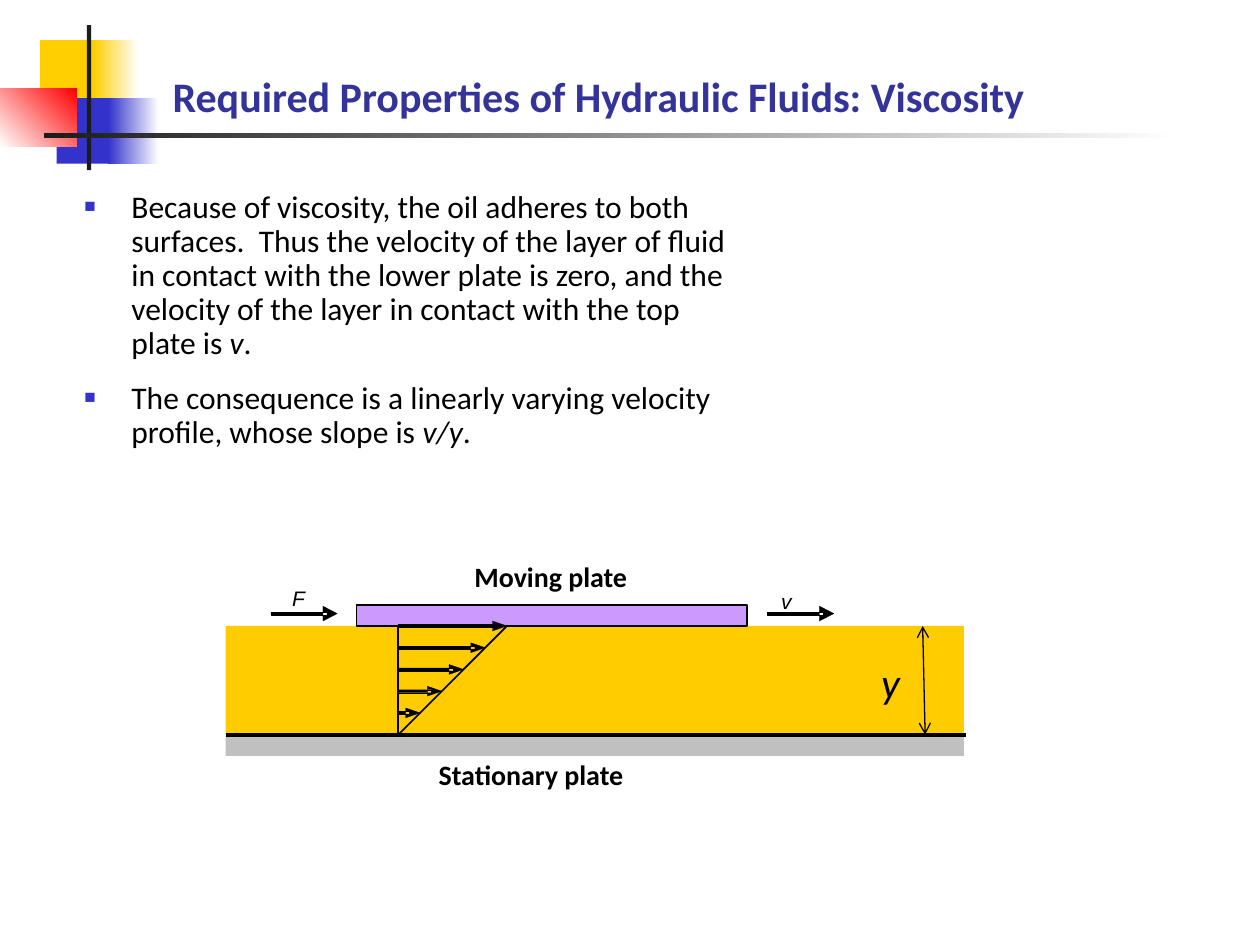
from lxml import etree
from pptx import Presentation
from pptx import util as u
from pptx.dml.color import RGBColor
from pptx.enum import shapes, text
from pptx.oxml.ns import qn

WHITE = RGBColor(0xFF, 0xFF, 0xFF)
BLACK = RGBColor(0, 0, 0)
YELLOW = RGBColor(0xFF, 0xCF, 0x01)
BLUE = RGBColor(0x33, 0x33, 0xCC)
RED = RGBColor(0xFF, 0, 0)
INK = RGBColor(0x1C, 0x1C, 0x1C)
NAVY = RGBColor(0x33, 0x33, 0x99)
OIL = RGBColor(0xFF, 0xCC, 0)
LILAC = RGBColor(0xCC, 0x99, 0xFF)
GREY = RGBColor(0xC0, 0xC0, 0xC0)


def add_block(parent, x, y, width, height, start, end=None, angle=0):
    block = parent.add_shape(shapes.MSO_SHAPE.RECTANGLE,
                             u.Cm(x), u.Cm(y), u.Cm(width), u.Cm(height))
    block.shadow.inherit = False
    block.line.fill.background()
    if end is None:
        block.fill.solid()
        block.fill.fore_color.rgb = start
    else:
        block.fill.gradient()
        block.fill.gradient_angle = angle
        for stop, color in zip(block.fill.gradient_stops, (start, end)):
            stop.color.rgb = color
    return block


def add_line(parent, start, end, weight, arrowheads=False):
    line = parent.add_connector(shapes.MSO_CONNECTOR.STRAIGHT,
                                *(u.Cm(value) for value in start + end))
    line.line.color.rgb = BLACK
    line.line.width = u.Pt(weight)
    if arrowheads:
        outline = line.line._get_or_add_ln()
        for tag in ("a:headEnd", "a:tailEnd"):
            etree.SubElement(outline, qn(tag), type="arrow")
    etree.SubElement(line._element.spPr, qn("a:effectLst"))


def add_block_arrow(parent, x, y, length, half_head):
    tip, neck, shaft_end, half_shaft = x + length, x + length - 0.29, x + length - 0.21, 0.03
    shaft = [(x, y - half_shaft), (shaft_end, y - half_shaft),
             (shaft_end, y + half_shaft), (x, y + half_shaft)]
    head = [(neck, y - half_head), (tip, y), (neck, y + half_head)]
    shaft, head = ([(u.Cm(px), u.Cm(py)) for px, py in part] for part in (shaft, head))
    builder = parent.build_freeform(*shaft[0])
    builder.add_line_segments(shaft[1:])
    builder.move_to(*head[0])
    builder.add_line_segments(head[1:])
    arrow = builder.convert_to_shape()
    arrow.shadow.inherit = False
    arrow.fill.solid()
    arrow.fill.fore_color.rgb = BLACK
    arrow.line.color.rgb = BLACK
    arrow.line.width = u.Pt(0.13)


def style_run(run, size, color=BLACK, font="Calibri", bold=False, italic=False):
    run.font.size = u.Pt(size)
    run.font.color.rgb = color
    run.font.name = font
    run.font.bold = bold
    run.font.italic = italic


def add_label(parent, x, y, width, height, words, size, align=text.PP_ALIGN.LEFT,
              anchor=text.MSO_ANCHOR.TOP, inset=True, **style):
    label = parent.add_textbox(u.Cm(x), u.Cm(y), u.Cm(width), u.Cm(height))
    frame = label.text_frame
    frame.text = words
    frame.word_wrap = inset
    frame.vertical_anchor = anchor
    if not inset:
        frame.margin_left = frame.margin_right = frame.margin_top = frame.margin_bottom = 0
    frame.paragraphs[0].alignment = align
    style_run(frame.paragraphs[0].runs[0], size, **style)


def add_ornament(parent, x, y):
    add_block(parent, x + 0.81, y + 0.3, 1.22, 1.32, YELLOW)
    add_block(parent, x + 1.88, y + 0.3, 0.91, 1.32, YELLOW, WHITE)
    add_block(parent, x + 1.14, y + 1.47, 1.17, 1.32, BLUE)
    add_block(parent, x + 2.18, y + 1.47, 1.02, 1.32, BLUE, WHITE)
    add_block(parent, x, y + 1.27, 1.55, 1.17, WHITE, RED, angle=45)
    add_block(parent, x + 1.75, y, 0.09, 2.92, INK)
    add_block(parent, x + 0.89, y + 2.18, 22.86, 0.09, INK, WHITE)


def add_bullet(paragraph):
    props = paragraph._p.get_or_add_pPr()
    props.set("marL", str(u.Cm(0.95)))
    props.set("indent", str(-u.Cm(0.95)))
    color = etree.SubElement(props, qn("a:buClr"))
    etree.SubElement(color, qn("a:srgbClr"), val=str(BLUE))
    etree.SubElement(props, qn("a:buSzPct"), val="60000")
    etree.SubElement(props, qn("a:buFont"), typeface="Arial")
    etree.SubElement(props, qn("a:buChar"), char="■")


def add_explanation(parent, x, y, width, height):
    points = [
        ("Because of viscosity, the oil adheres to both surfaces.  Thus the velocity of the "
         "layer of fluid in contact with the lower plate is zero, and the velocity of the "
         "layer in contact with the top plate is ", "v"),
        ("The consequence is a linearly varying velocity profile, whose slope is ", "v/y"),
    ]
    frame = parent.add_textbox(u.Cm(x), u.Cm(y), u.Cm(width), u.Cm(height)).text_frame
    frame.word_wrap = True
    for index, (sentence, symbol) in enumerate(points):
        point = frame.add_paragraph() if index else frame.paragraphs[0]
        point.line_spacing = 0.9
        point.space_before = u.Pt(12)
        add_bullet(point)
        for words in (sentence, symbol, "."):
            run = point.add_run()
            run.text = words
            style_run(run, 18, italic=words == symbol)


def add_plate_diagram(parent, x, y, width):
    oil_top, oil_depth, plate_depth = y + 1.47, 2.19, 0.43
    oil_bottom = oil_top + oil_depth
    profile_x, layers = x + 3.48, 5
    group = parent.add_group_shape().shapes

    add_block(group, x, oil_top, width, oil_depth, OIL)
    moving = add_block(group, x + 2.64, oil_top - plate_depth, 7.87, plate_depth, LILAC)
    moving.line.color.rgb = BLACK
    moving.line.width = u.Pt(1)
    add_block(group, x, oil_bottom, width, plate_depth, GREY)

    for layer in range(layers):
        drop = oil_depth * layer / layers
        add_block_arrow(group, profile_x, oil_top + drop, oil_depth - drop, 0.1)
    add_line(group, (profile_x, oil_bottom), (profile_x, oil_top), 1)
    add_line(group, (profile_x + oil_depth, oil_top), (profile_x, oil_bottom), 1)

    for offset in (0.91, 10.92):
        add_block_arrow(group, x + offset, y + 1.22, 1.34, 0.15)
    add_label(group, x + 1.34, y + 0.66, 0.48, 0.61, "F", 12,
              inset=False, font="Arial", italic=True)
    add_label(group, x + 11.2, y + 0.71, 0.43, 0.61, "v", 12,
              inset=False, font="Arial", italic=True)

    add_line(group, (x, oil_bottom), (x + width + 0.04, oil_bottom), 2.13)
    center = text.PP_ALIGN.CENTER
    add_label(group, x + 3.4, y + 3.99, 5.51, 1.17, "Stationary plate", 16, center, bold=True)
    add_label(group, x + 3.99, y, 5.13, 1.17, "Moving plate", 16, center, bold=True)
    add_label(group, x + 12.32, y + 1.96, 1.52, 1.3, "y", 24, text.PP_ALIGN.RIGHT, italic=True)
    add_line(group, (x + 14.05, oil_top), (x + 14.1, oil_bottom), 0.75, arrowheads=True)


def main():
    deck = Presentation()
    deck.slide_width, deck.slide_height = u.Cm(25.4), u.Cm(19.05)
    canvas = deck.slides.add_slide(deck.slide_layouts[6]).shapes
    add_ornament(canvas, 0, 0.51)
    add_label(canvas, 3.23, 0.84, 21.64, 1.73,
              "Required Properties of Hydraulic Fluids: Viscosity", 24,
              anchor=text.MSO_ANCHOR.BOTTOM, color=NAVY, bold=True)
    add_explanation(canvas, 1.45, 3.73, 13.94, 5.99)
    add_plate_diagram(canvas, 4.55, 11.15, 14.88)
    deck.save("out.pptx")


if __name__ == "__main__":
    main()
